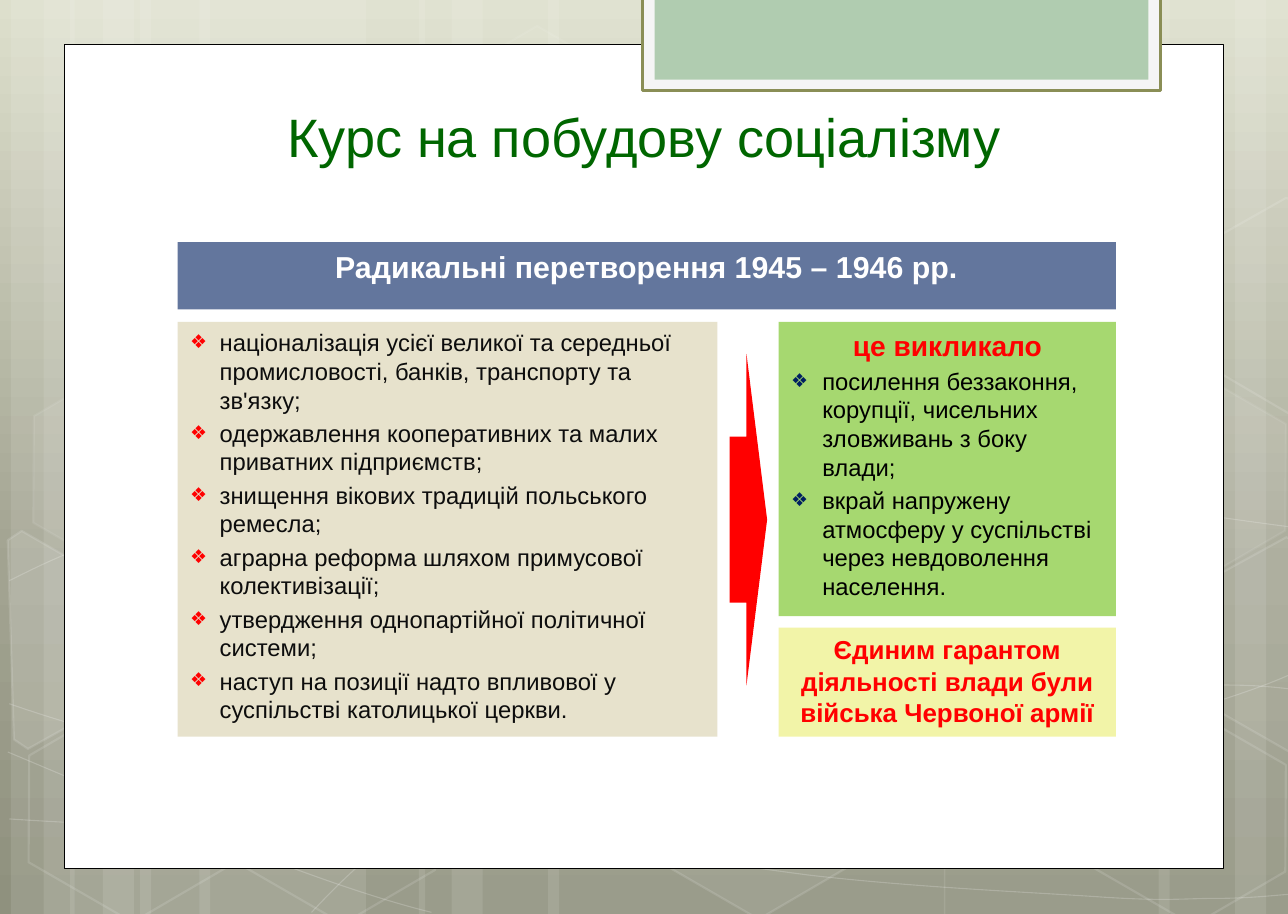
"""Build the slide about Poland's course toward socialism."""
from dataclasses import dataclass
from typing import Optional

from lxml.etree import SubElement
from pptx import Presentation
from pptx.dml.color import RGBColor
from pptx.enum.shapes import MSO_SHAPE as Preset
from pptx.enum.text import MSO_ANCHOR as Anchor, MSO_AUTO_SIZE as AutoSize, PP_ALIGN as Align
from pptx.oxml.ns import qn
from pptx.util import Inches, Pt

COLUMNS, ROWS = 827, 587
CELL = Inches(0.01)
FONT = "Arial"
WHITE = RGBColor(0xFF, 0xFF, 0xFF)
BLACK = RGBColor(0x00, 0x00, 0x00)
INK = RGBColor(0x0D, 0x0D, 0x0D)
RED = RGBColor(0xFF, 0x00, 0x00)
NAVY = RGBColor(0x00, 0x20, 0x60)
DARK_GREEN = RGBColor(0x00, 0x66, 0x00)
SAND = RGBColor(0xE2, 0xDC, 0xC1)
YELLOW = RGBColor(0xF0, 0xF2, 0x94)
LIME = RGBColor(0x92, 0xD0, 0x50)
SMOKE = RGBColor(0xF5, 0xF5, 0xF5)
OLIVE = RGBColor(0x8A, 0x8E, 0x56)
SAGE = RGBColor(0xB0, 0xCC, 0xB0)
BACKDROP = ((0, RGBColor(0xDD, 0xDF, 0xCC)), (62, RGBColor(0xA2, 0xA3, 0x91)),
            (100, RGBColor(0x8F, 0x91, 0x7E)))


@dataclass(frozen=True)
class Box:
    """Place on the grid, in columns and rows."""
    column: float
    row: float
    columns: float
    rows: float


@dataclass(frozen=True)
class Style:
    """Fill and outline; opacities are percentages."""
    fill: Optional[RGBColor] = None
    opacity: int = 100
    line: Optional[RGBColor] = None
    width: float = 1
    line_opacity: int = 100


@dataclass(frozen=True)
class Bands:
    """Three overlapping vertical stripes that start at one column."""
    start: int
    wide: int = 145
    mirrored: bool = False


@dataclass(frozen=True)
class Hexagon:
    """Tilted hexagon of the backdrop."""
    column: int
    row: int
    style: Style


@dataclass(frozen=True)
class CutHexagon:
    """Hexagon cut by the slide's edge, given by its corners."""
    corners: tuple
    style: Style


OUTLINE = Style(line=WHITE, line_opacity=12)
FAINT = Style(WHITE, 7, WHITE, line_opacity=8)
STRONG = Style(WHITE, 10, WHITE, line_opacity=12)
CURVE = Style(line=WHITE, width=0.5, line_opacity=20)

BANDS = (Bands(7), Bands(45), Bands(834, mirrored=True), Bands(269, wide=255))
HEXAGONS = (
    Hexagon(276, 28, Style(WHITE, 4, WHITE, line_opacity=8)),
    Hexagon(411, 460, Style(WHITE, 6, WHITE, line_opacity=12)),
    Hexagon(9, 462, OUTLINE), Hexagon(12, 244, FAINT), Hexagon(144, 463, OUTLINE),
    Hexagon(623, 355, STRONG), Hexagon(690, 464, OUTLINE), Hexagon(690, 245, FAINT),
)
CUT_HEXAGONS = (
    CutHexagon(((5, 347), (14, 341), (78, 378), (79, 447), (18, 481), (9, 475)), STRONG),
    CutHexagon(((766, 378), (826, 345), (832, 348), (836, 481), (830, 484), (767, 448)),
               Style(WHITE, 4, WHITE, line_opacity=12)),
    CutHexagon(((766, 161), (826, 127), (833, 131), (836, 263), (830, 267), (767, 230)), OUTLINE),
)
CURVES = (
    ((6, 526), (51, 529), (95, 531), (157, 530), (219, 529), (296, 528), (379, 520),
     (461, 512), (579, 497), (655, 483), (730, 468), (808, 444), (833, 431)),
    ((6, 373), (30, 361), (54, 349), (100, 337), (147, 326), (214, 308), (287, 303),
     (361, 297), (450, 297), (541, 303), (632, 309), (783, 333), (833, 339)),
    ((5, 483), (105, 525), (204, 568), (277, 586)),
    ((6, 452), (32, 461), (58, 469), (106, 481), (154, 494), (226, 513), (295, 526),
     (364, 540), (451, 553), (519, 562), (588, 570), (661, 573), (705, 576),
     (749, 579), (760, 577), (781, 577), (803, 577), (818, 575), (833, 574)),
    ((200, 586), (215, 570), (230, 555), (250, 540), (270, 526), (298, 510), (321, 500),
     (344, 489), (358, 484), (388, 476), (419, 468), (474, 457), (503, 452),
     (532, 447), (537, 447), (562, 445), (588, 443), (628, 441), (657, 440),
     (685, 439), (733, 440), (788, 440), (803, 440), (817, 441), (832, 443)),
)
REFORMS = (
    "націоналізація усієї великої та середньої промисловості, банків, транспорту та зв'язку;",
    "одержавлення кооперативних та малих приватних підприємств;",
    "знищення вікових традицій польського ремесла;",
    "аграрна реформа шляхом примусової колективізації;",
    "утвердження однопартійної політичної системи;",
    "наступ на позиції надто впливової у суспільстві католицької церкви.",
)
CONSEQUENCES = (
    "посилення беззаконня, корупції, чисельних зловживань з боку влади;",
    "вкрай напружену атмосферу у суспільстві через невдоволення населення.",
)


def fade(shape, color_path: str, opacity: int) -> None:
    """Make the colour found under the shape's properties see-through."""
    if opacity < 100:
        tags = "/".join(qn(tag) for tag in color_path.split("/"))
        SubElement(shape.element.spPr.find(tags), qn("a:alpha"), val=str(opacity * 1000))


def paint(shape, style: Style) -> None:
    """Apply fill and outline and drop the shadow."""
    shape.shadow.inherit = False
    if style.fill is None:
        shape.fill.background()
    else:
        shape.fill.solid()
        shape.fill.fore_color.rgb = style.fill
        fade(shape, "a:solidFill/a:srgbClr", style.opacity)
    if style.line is None:
        shape.line.fill.background()
    else:
        shape.line.color.rgb = style.line
        shape.line.width = Pt(style.width)
        fade(shape, "a:ln/a:solidFill/a:srgbClr", style.line_opacity)


def add_preset(slide, box: Box, style: Style, preset=Preset.RECTANGLE):
    """Add a painted preset shape on the grid."""
    lengths = (box.column, box.row, box.columns, box.rows)
    shape = slide.shapes.add_shape(preset, *(round(length * CELL) for length in lengths))
    paint(shape, style)
    return shape


def place(placeholder, box: Box, style: Style = Style()):
    """Move a placeholder onto the grid, in front of what is drawn."""
    placeholder.left, placeholder.top = round(box.column * CELL), round(box.row * CELL)
    placeholder.width, placeholder.height = round(box.columns * CELL), round(box.rows * CELL)
    placeholder.element.getparent().append(placeholder.element)
    paint(placeholder, style)
    return placeholder


def add_outline(slide, points, style: Style, close: bool):
    """Draw a path through grid points."""
    start, *rest = points
    builder = slide.shapes.build_freeform(*start, scale=CELL)
    builder.add_line_segments(rest, close=close)
    shape = builder.convert_to_shape()
    paint(shape, style)
    return shape


def add_curve(slide, knots) -> None:
    """Draw a chain of cubic Bezier segments."""
    shape = add_outline(slide, knots, CURVE, close=False)
    outline = next(shape.element.iter(qn("a:path")))
    segments = outline.findall(qn("a:lnTo"))
    for first in range(0, len(segments), 3):
        bezier = SubElement(outline, qn("a:cubicBezTo"))
        for segment in segments[first:first + 3]:
            bezier.append(segment[0])
            outline.remove(segment)


def write(shape, text: str, *, size: float, color: RGBColor, bold: bool = False,
          align=Align.CENTER, anchor=Anchor.TOP, bullet: Optional[RGBColor] = None,
          indent: int = 0) -> None:
    """Add one formatted paragraph to a shape."""
    frame = shape.text_frame
    frame.word_wrap, frame.auto_size, frame.vertical_anchor = True, AutoSize.NONE, anchor
    frame.margin_left = frame.margin_right = 8 * CELL
    frame.margin_top = frame.margin_bottom = 4 * CELL
    paragraph = frame.add_paragraph() if frame.text else frame.paragraphs[0]
    paragraph.alignment = align
    paragraph.space_before = Pt(round(size * 0.2, 1))
    run = paragraph.add_run()
    run.text = text
    run.font.name, run.font.size, run.font.bold = FONT, Pt(size), bold
    run.font.color.rgb = color
    properties = paragraph._p.get_or_add_pPr()
    properties.set("marL", str(indent * CELL))
    properties.set("indent", str(-indent * CELL))
    if bullet is None:
        SubElement(properties, qn("a:buNone"))
    else:
        SubElement(SubElement(properties, qn("a:buClr")), qn("a:srgbClr"), val=str(bullet))
        SubElement(properties, qn("a:buSzPct"), val="80000")
        SubElement(properties, qn("a:buFont"), typeface=FONT)
        SubElement(properties, qn("a:buChar"), char="❖")


def draw_backdrop(slide) -> None:
    """Draw the gradient, stripes, curves, hexagons and the white sheet."""
    fill = slide.background.fill
    fill.gradient()
    fill.gradient_angle = 270
    stops = next(slide.element.iter(qn("a:gsLst")))
    stops.clear()
    for position, color in BACKDROP:
        stop = SubElement(stops, qn("a:gs"), pos=str(position * 1000))
        SubElement(stop, qn("a:srgbClr"), val=str(color))
    for bands in BANDS:
        for offset, width in ((83, bands.wide), (0, 41), (21, 69)):
            column = bands.start - offset - width if bands.mirrored else bands.start + offset
            add_preset(slide, Box(column, 0, width, ROWS), Style(WHITE, 10))
    for knots in CURVES:
        add_curve(slide, knots)
    for hexagon in HEXAGONS:
        box = Box(hexagon.column, hexagon.row, 145, 119)
        shape = add_preset(slide, box, hexagon.style, Preset.HEXAGON)
        shape.adjustments[0] = 0.285
        shape.rotation = 30
    for cut in CUT_HEXAGONS:
        add_outline(slide, cut.corners, cut.style, close=True)
    add_preset(slide, Box(41.4, 28.6, 744, 529), Style(WHITE, line=BLACK, width=0.5))
    add_preset(slide, Box(412.4, -2, 333, 60), Style(SMOKE, line=OLIVE, width=1.25))
    add_preset(slide, Box(420.4, -2, 317, 53.2), Style(SAGE))


def main() -> None:
    """Build and save the presentation."""
    presentation = Presentation()
    presentation.slide_width, presentation.slide_height = COLUMNS * CELL, ROWS * CELL
    slide = presentation.slides.add_slide(presentation.slide_layouts[3])
    title, reforms, consequences = slide.placeholders
    draw_backdrop(slide)
    place(title, Box(41.4, 57, 744, 55))
    write(title, "Курс на побудову соціалізму", size=25, color=DARK_GREEN, anchor=Anchor.BOTTOM)
    header = add_preset(slide, Box(114, 155.5, 602.5, 43.3), Style(NAVY, 61))
    write(header, "Радикальні перетворення 1945 – 1946 рр.", size=14, color=WHITE, bold=True)
    place(reforms, Box(114, 206.7, 346.6, 266.5), Style(SAND, 81))
    for reform in REFORMS:
        write(reforms, reform, size=11, color=INK, align=Align.LEFT, bullet=RED, indent=19)
    guarantor = add_preset(slide, Box(500, 403.2, 216.5, 70), Style(YELLOW, 81))
    write(guarantor, "Єдиним гарантом діяльності влади були війська Червоної армії",
          size=12, color=RED, bold=True)
    place(consequences, Box(500, 206.7, 216.5, 189), Style(LIME, 81))
    write(consequences, "це викликало", size=13, color=RED, bold=True)
    for consequence in CONSEQUENCES:
        write(consequences, consequence, size=11, color=BLACK, align=Align.LEFT,
              bullet=NAVY, indent=20)
    arrow = add_preset(slide, Box(468.6, 227.3, 24, 213), Style(RED), Preset.RIGHT_ARROW)
    arrow.adjustments[1] = 0.552
    presentation.save("out.pptx")


if __name__ == "__main__":
    main()
